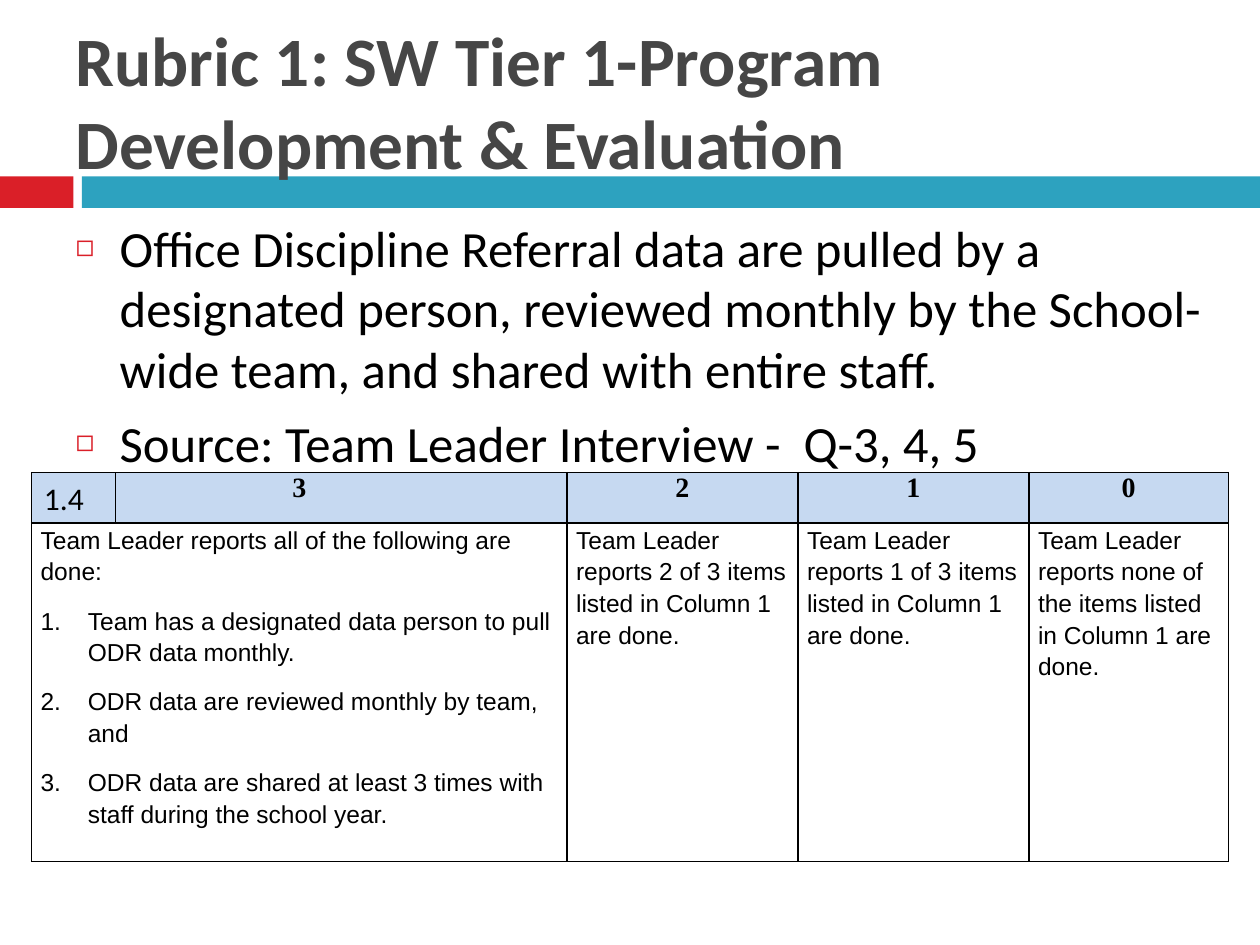
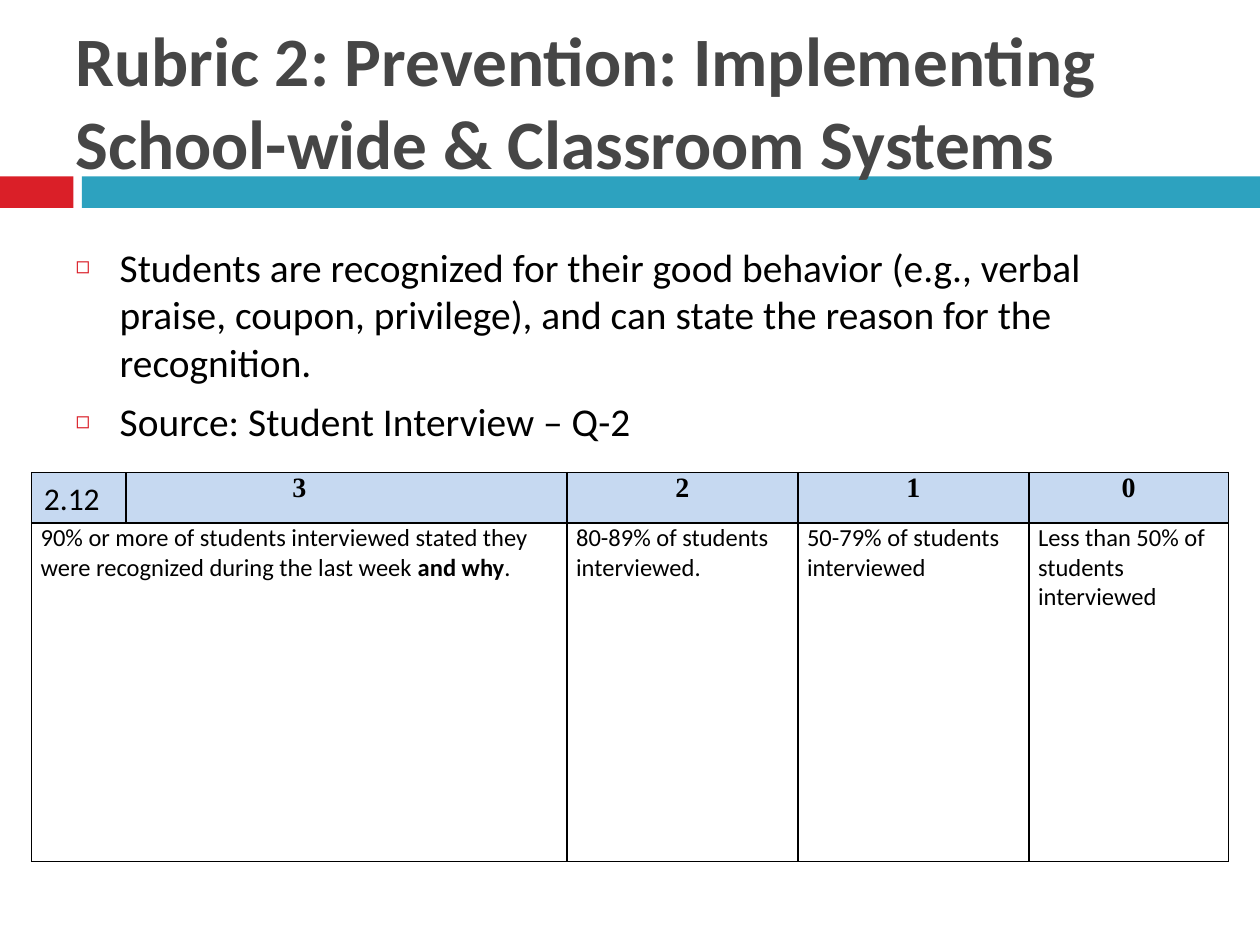
from dataclasses import dataclass

from lxml import etree
from pptx import Presentation
from pptx.dml.color import RGBColor as Rgb
from pptx.enum import shapes as sh, text as tx
from pptx.oxml import ns
from pptx.util import Pt


@dataclass(frozen=True)
class Theme:
    red: str = "DA1F28"
    teal: str = "2DA2BF"
    gray: str = "464646"
    ink: str = "000000"
    head: str = "C6D9F1"
    sans: str = "Calibri"
    serif: str = "Times New Roman"
    title: float = 39.6
    score: float = 16
    cell: float = 14
    tag: float = 18


T = Theme()
COLS = [306, 132, 132, 114]
ROWS = [28.8, 193.6]
LEFT, TOP = 18, 270

RUBRICS = [
    dict(
        title="Rubric 1: SW Tier 1-Program Development & Evaluation",
        list=["Office Discipline Referral data are pulled by a designated person, "
              "reviewed monthly by the School-wide team, and shared with entire staff.",
              "Source: Team Leader Interview -  Q-3, 4, 5"],
        box=(36, 120, 666, 278.6), size=29,
        tag="1.4", wide=48, font="Arial", lead=1.15, after=10,
        cells=[["Team Leader reports all of the following are done:",
                "Team has a designated data person to pull ODR data monthly.",
                "ODR data are reviewed monthly by team, and",
                "ODR data are shared at least 3 times with staff during the school year."],
               ["Team Leader reports 2 of 3 items listed in Column 1 are done."],
               ["Team Leader reports 1 of 3 items listed in Column 1 are done."],
               ["Team Leader reports none of the items listed in Column 1 are done."]],
    ),
    dict(
        title="Rubric 2: Prevention: Implementing School-wide & Classroom Systems",
        list=["Students are recognized for their good behavior (e.g., verbal praise, "
              "coupon, privilege), and can state the reason for the recognition.",
              "Source: Student Interview – Q-2"],
        box=(36, 135.4, 648, 105), size=22.5,
        tag="2.12", wide=54, font=T.sans, lead=1, after=0,
        # Words between asterisks are bold.
        cells=[["90% or more of students interviewed stated they were recognized "
                "during the last week *and why*."],
               ["80-89% of students interviewed."],
               ["50-79% of students interviewed"],
               ["Less than 50% of students interviewed"]],
    ),
]


def style(para, font, size, color=T.ink, bold=False):
    for run in para.runs:
        run.font.name, run.font.size, run.font.bold = font, Pt(size), bold
        run.font.color.rgb = Rgb.from_string(color)


def mark(para, hang, *items):
    """Give a paragraph a hanging indent and its bullet elements."""
    props = para._p.get_or_add_pPr()
    props.set("marL", str(Pt(hang)))
    props.set("indent", str(-Pt(hang)))
    for name, attrs in items:
        etree.SubElement(props, ns.qn(name), attrs)
    return props


deck = Presentation()
deck.slide_width, deck.slide_height = Pt(720), Pt(540)
layout = deck.slide_layouts[1]

for rubric in RUBRICS:
    slide = deck.slides.add_slide(layout)

    # The bands are drawn once and moved to the layout, behind the titles.
    if len(deck.slides) == 1:
        for x, wide, color in [(0, 42, T.red), (46.8, 673.2, T.teal)]:
            band = slide.shapes.add_shape(
                sh.MSO_SHAPE.RECTANGLE, Pt(x), Pt(100.8), Pt(wide), Pt(18))
            band.shadow.inherit = False
            band.fill.solid()
            band.fill.fore_color.rgb = Rgb.from_string(color)
            band.line.fill.background()
            layout.shapes.element.insert(2, band.element)

    title, body = slide.shapes.title, slide.placeholders[1]
    for holder, box in [(title, (36, 12.2, 648, 90)), (body, rubric["box"])]:
        holder.left, holder.top, holder.width, holder.height = map(Pt, box)
        holder.text_frame.auto_size = tx.MSO_AUTO_SIZE.NONE
    title.text_frame.text = rubric["title"]
    title.text_frame.vertical_anchor = tx.MSO_ANCHOR.MIDDLE
    para = title.text_frame.paragraphs[0]
    para.alignment = tx.PP_ALIGN.LEFT
    style(para, T.sans, T.title, T.gray, True)

    body.text_frame.text = "\n".join(rubric["list"])
    for para in body.text_frame.paragraphs:
        para.space_before = Pt(7)
        style(para, T.sans, rubric["size"])
        props = mark(para, 25.2, ("a:buClr", {}), ("a:buSzPct", {"val": "60000"}),
                     ("a:buChar", {"char": "◻"}))
        etree.SubElement(props.find(ns.qn("a:buClr")), ns.qn("a:srgbClr"), val=T.red)

    table = slide.shapes.add_table(
        2, 4, Pt(LEFT), Pt(TOP), Pt(sum(COLS)), Pt(sum(ROWS))).table
    table.first_row = table.horz_banding = False
    for col, wide in zip(table.columns, COLS):
        col.width = Pt(wide)
    for row, high in zip(table.rows, ROWS):
        row.height = Pt(high)

    for cell in table.iter_cells():
        props = cell._tc.get_or_add_tcPr()
        for side in "LRTB":
            line = etree.SubElement(props, ns.qn("a:ln" + side), w=str(Pt(1)))
            fill = etree.SubElement(line, ns.qn("a:solidFill"))
            etree.SubElement(fill, ns.qn("a:srgbClr"), val=T.ink)
        cell.margin_top = cell.margin_bottom = 0

    for i, lines in enumerate(rubric["cells"]):
        head, cell = table.cell(0, i), table.cell(1, i)
        head.margin_left = head.margin_right = Pt(3.6)
        head.fill.solid()
        head.fill.fore_color.rgb = Rgb.from_string(T.head)
        head.text_frame.text = str(3 - i)
        para = head.text_frame.paragraphs[0]
        para.alignment = tx.PP_ALIGN.CENTER
        style(para, T.serif, T.score, bold=True)

        cell.margin_left = cell.margin_right = Pt(5.2)
        cell.fill.background()
        cell.text_frame.text = "\n".join(lines)
        for n, para in enumerate(cell.text_frame.paragraphs):
            parts = para.text.split("*")
            para.text = parts[0]
            for part in parts[1:]:
                para.add_run().text = part
            style(para, rubric["font"], T.cell)
            for run in para.runs[1::2]:
                run.font.bold = True
            para.line_spacing, para.space_after = rubric["lead"], Pt(rubric["after"])
            if n:
                mark(para, 27, ("a:buFont", {"typeface": "+mj-lt"}),
                     ("a:buAutoNum", {"type": "arabicPeriod"}))

    tag = slide.shapes.add_shape(
        sh.MSO_SHAPE.RECTANGLE, Pt(LEFT), Pt(TOP), Pt(rubric["wide"]), Pt(ROWS[0]))
    tag.shadow.inherit = False
    tag.fill.background()
    tag.line.color.rgb = Rgb.from_string(T.ink)
    tag.line.width = Pt(0.75)
    frame = tag.text_frame
    frame.text = rubric["tag"]
    frame.word_wrap = True
    frame.auto_size = tx.MSO_AUTO_SIZE.SHAPE_TO_FIT_TEXT
    frame.vertical_anchor = tx.MSO_ANCHOR.TOP
    frame.paragraphs[0].alignment = tx.PP_ALIGN.LEFT
    style(frame.paragraphs[0], T.sans, T.tag)

deck.save("out.pptx")
